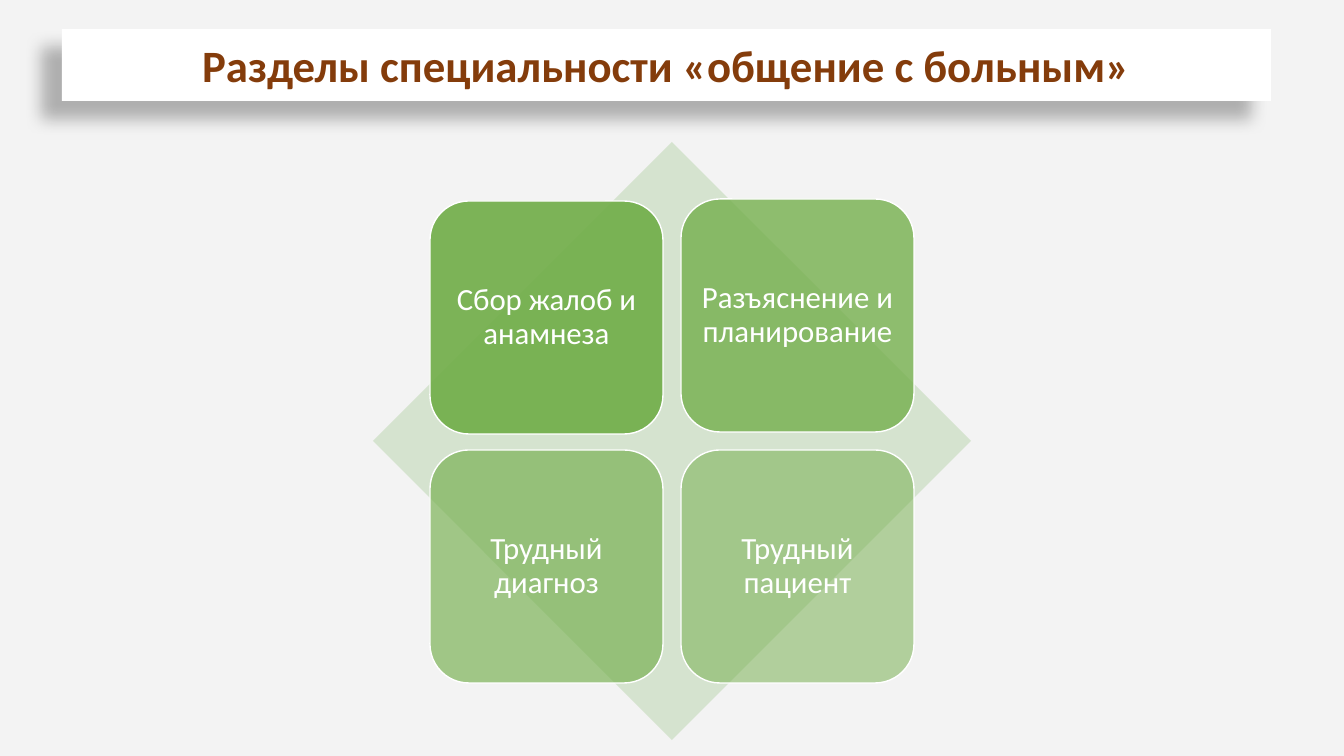
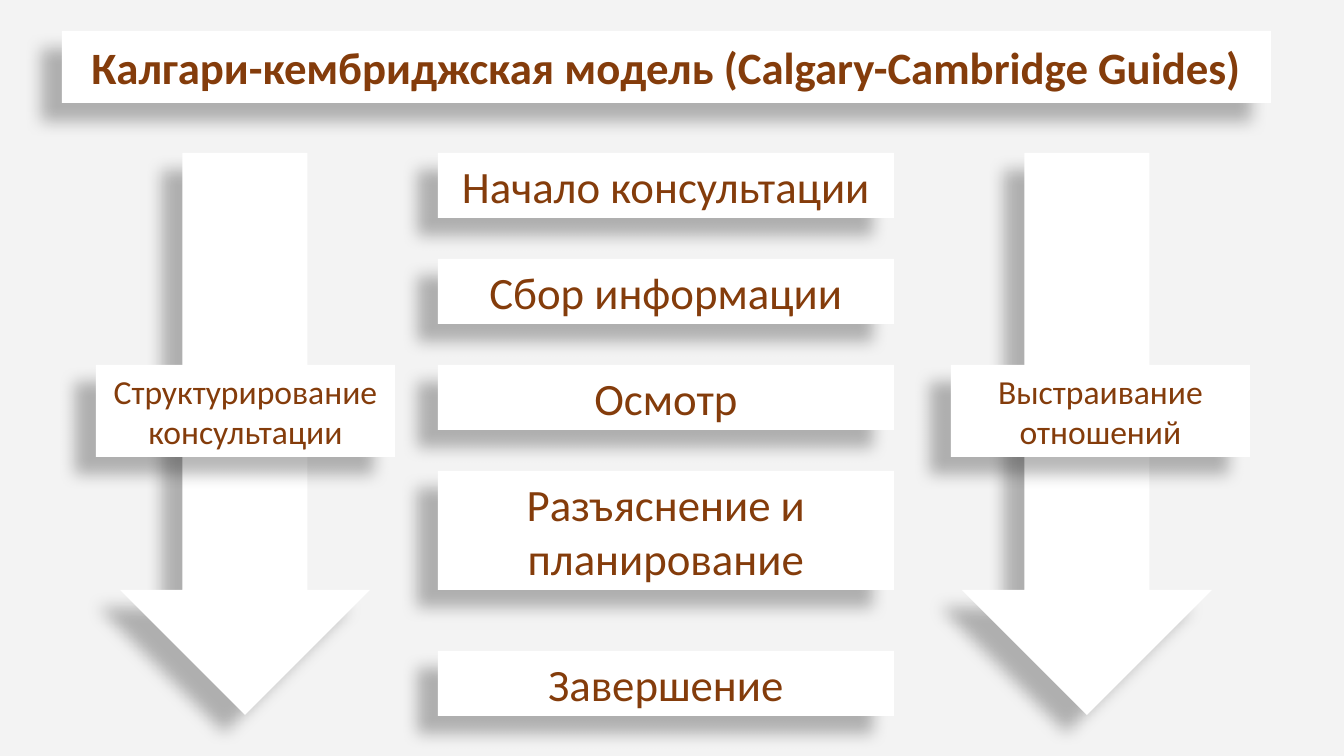
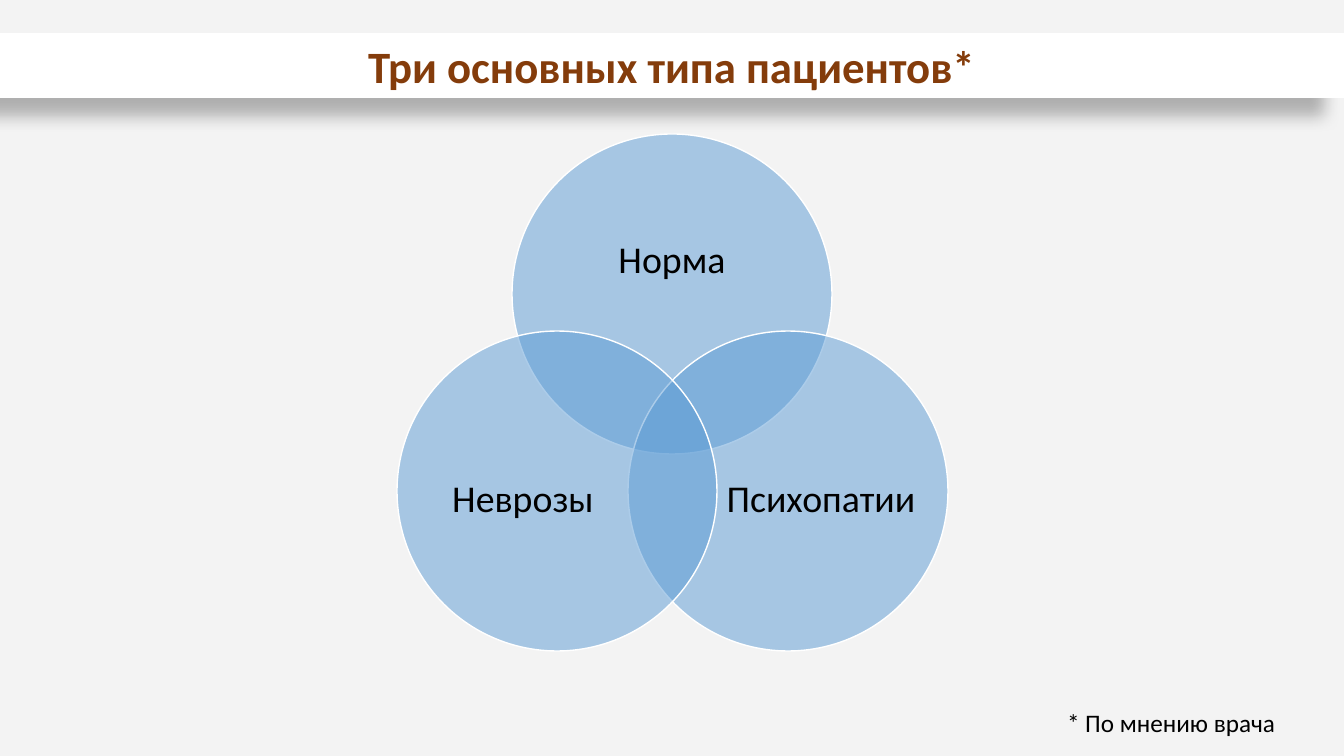
from lxml.etree import SubElement
from pptx import Presentation
from pptx.dml.color import RGBColor
from pptx.enum.shapes import MSO_SHAPE
from pptx.enum.text import MSO_ANCHOR, MSO_AUTO_SIZE, PP_ALIGN
from pptx.oxml.ns import qn
from pptx.util import Emu, Pt

WIDTH, HEIGHT = 1344, 756
SCALE = 12192000 / WIDTH
FONT = "Calibri"
BACKGROUND = "F3F3F3"
WHITE = "FFFFFF"
BLACK = "000000"
BROWN = "843C0B"
GREEN = "70AD47"
PALE_GREEN = "D5E3CF"
BLUE = "5B9BD5"


def px(length):
    return Emu(round(length * SCALE))


def colour(hex_string):
    return RGBColor.from_string(hex_string)


def paint(shape, fill, opacity=100, outline=None):
    shape.fill.solid()
    shape.fill.fore_color.rgb = colour(fill)
    if opacity < 100:
        colour_element = shape._element.spPr.find(qn("a:solidFill"))[0]
        SubElement(colour_element, qn("a:alpha"), val=str(opacity * 1000))
    if outline:
        shape.line.color.rgb = colour(outline)
        shape.line.width = Pt(1)
    else:
        shape.line.fill.background()


def add_shadow(shape):
    effects = shape._element.spPr.find(qn("a:effectLst"))
    if effects is None:
        effects = SubElement(shape._element.spPr, qn("a:effectLst"))
    shadow = SubElement(
        effects, qn("a:outerShdw"), blurRad=str(Pt(11.8)), dist=str(Pt(19.7)),
        dir=str(141 * 60000), algn="tr", rotWithShape="0")
    tint = SubElement(shadow, qn("a:srgbClr"), val=BLACK)
    SubElement(tint, qn("a:alpha"), val="28000")


def write(shape, text, size, ink, bold=False, align=PP_ALIGN.CENTER,
          spacing=1.0, insets=(10, 5)):
    frame = shape.text_frame
    frame.word_wrap = True
    frame.auto_size = MSO_AUTO_SIZE.NONE
    frame.vertical_anchor = MSO_ANCHOR.MIDDLE
    frame.margin_left = frame.margin_right = px(insets[0])
    frame.margin_top = frame.margin_bottom = px(insets[1])
    para = frame.paragraphs[0]
    para.text = text
    para.alignment = align
    para.line_spacing = spacing
    para.font.name = FONT
    para.font.size = Pt(size)
    para.font.bold = bold
    para.font.color.rgb = colour(ink)


def place(shape, left, top, width, height):
    shape.left, shape.top = px(left), px(top)
    shape.width, shape.height = px(width), px(height)


def add_figure(page, kind, bounds, fill, opacity=100, outline=None):
    shape = page.shapes.add_shape(kind, *map(px, bounds))
    shape.shadow.inherit = False
    paint(shape, fill, opacity, outline)
    return shape


def add_panel(page, bounds, text=None, size=32, kind=MSO_SHAPE.RECTANGLE):
    panel = add_figure(page, kind, bounds, WHITE)
    add_shadow(panel)
    if text:
        write(panel, text, size, BROWN)


def add_label(page, bounds, text, size, **style):
    box = page.shapes.add_textbox(*map(px, bounds))
    write(box, text, size, BLACK, **style)


def add_page(deck, title_text, bounds, outline_name="roundRect"):
    page = deck.slides.add_slide(deck.slide_layouts[5])
    title = page.shapes.title
    place(title, *bounds)
    geometry = SubElement(title._element.spPr, qn("a:prstGeom"), prst=outline_name)
    SubElement(geometry, qn("a:avLst"))
    paint(title, WHITE)
    add_shadow(title)
    write(title, title_text, 32, BROWN, bold=True)
    return page


def build_sections(deck):
    page = add_page(deck, "Разделы специальности «общение с больным»",
                    (62, 29, 1209, 72))
    add_figure(page, MSO_SHAPE.DIAMOND, (373, 142, 598, 598), PALE_GREEN)
    tiles = [
        ("Сбор жалоб и анамнеза", 430, 201, 90),
        ("Разъяснение и планирование", 681, 199, 77),
        ("Трудный диагноз", 430, 450, 63),
        ("Трудный пациент", 681, 450, 50),
    ]
    for text, left, top, opacity in tiles:
        tile = add_figure(page, MSO_SHAPE.ROUNDED_RECTANGLE,
                          (left, top, 233, 233), GREEN, opacity, WHITE)
        write(tile, text, 22, WHITE, spacing=0.9, insets=(9, 9))


def build_model(deck):
    page = add_page(deck, "Калгари-кембриджская модель (Calgary-Cambridge Guides)",
                    (62, 31, 1209, 72))
    first_top, step = 153, 106
    stages = ["Начало консультации", "Сбор информации", "Осмотр"]
    for index, text in enumerate(stages):
        add_panel(page, (438, first_top + index * step, 456, 65), text)
    add_panel(page, (438, first_top + 3 * step, 456, 119), "Разъяснение и планирование")
    add_panel(page, (438, 651, 456, 65), "Завершение")
    threads = [
        (120, 96, "Структурирование консультации"),
        (962, 951, "Выстраивание отношений"),
    ]
    for arrow_left, panel_left, text in threads:
        add_panel(page, (arrow_left, first_top, 250, 562), kind=MSO_SHAPE.DOWN_ARROW)
        add_panel(page, (panel_left, first_top + 2 * step, 299, 92), text, 24)


def build_patient_types(deck):
    page = add_page(deck, "Три основных типа пациентов*", (0, 33, WIDTH, 65), "rect")
    diameter = 320
    circles = [
        ("Норма", 512, 134, (555, 190, 234, 143)),
        ("Психопатии", 628, 331, (725, 413, 192, 175)),
        ("Неврозы", 397, 331, (427, 413, 192, 175)),
    ]
    for text, left, top, label_bounds in circles:
        add_figure(page, MSO_SHAPE.OVAL, (left, top, diameter, diameter),
                   BLUE, 50, WHITE)
        add_label(page, label_bounds, text, 27, spacing=0.9, insets=(0, 0))
    add_label(page, (1057, 702, 258, 40), "* По мнению врача", 18, align=PP_ALIGN.LEFT)


def main():
    deck = Presentation()
    deck.slide_width, deck.slide_height = px(WIDTH), px(HEIGHT)
    backdrop = deck.slide_master.background.fill
    backdrop.solid()
    backdrop.fore_color.rgb = colour(BACKGROUND)
    build_sections(deck)
    build_model(deck)
    build_patient_types(deck)
    deck.save("out.pptx")


if __name__ == "__main__":
    main()
